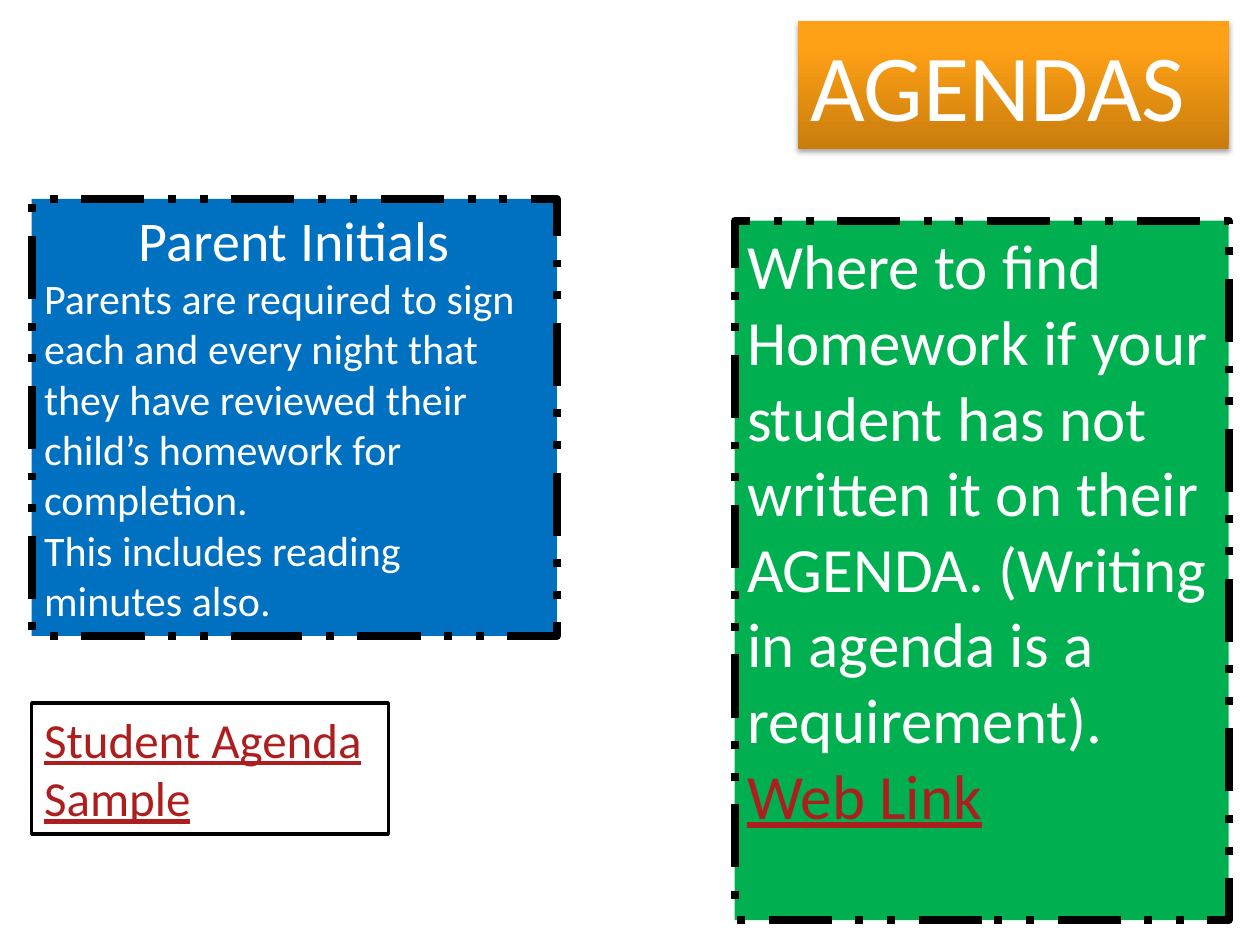
from lxml import etree
from pptx import Presentation
from pptx import util as u
from pptx.dml import color
from pptx.enum import dml, text
from pptx.oxml import ns

WHITE, BLACK, LINK = "FFFFFF", "000000", "AD1F1F"
BANNER_STOPS = [(0, "C97D0D"), (80, "FFA116"), (100, "FFA217")]


def rgb(value):
    """Turn a hex string into a colour."""
    return color.RGBColor.from_string(value)


def add_node(parent, tag, **attributes):
    """Append a DrawingML element and return it."""
    values = {name: str(int(value)) if not isinstance(value, str) else value
              for name, value in attributes.items()}
    return etree.SubElement(parent, ns.qn("a:" + tag), values)


def add_panel(page, box, fill=None, line_width=None, dash=None):
    """Add a wrapping text panel with an optional fill and outline."""
    panel = page.shapes.add_textbox(*(u.Cm(length) for length in box))
    panel.text_frame.word_wrap = True
    panel.text_frame.auto_size = text.MSO_AUTO_SIZE.NONE
    if fill:
        panel.fill.solid()
        panel.fill.fore_color.rgb = rgb(fill)
    if line_width:
        panel.line.color.rgb = rgb(BLACK)
        panel.line.width = u.Pt(line_width)
        panel.line.dash_style = dash
    return panel


def write(panel, lines):
    """Write (wording, size, ink, alignment) lines into a panel."""
    frame = panel.text_frame
    for index, (wording, size, ink, alignment) in enumerate(lines):
        para = frame.add_paragraph() if index else frame.paragraphs[0]
        para.alignment = alignment
        para.font.name = "Calibri"
        para.font.size = u.Pt(size)
        para.font.color.rgb = rgb(ink)
        span = para.add_run()
        span.text = wording
        span.font.underline = True if ink == LINK else None


def add_banner(page, box):
    """Add the shaded title banner with its soft shadow."""
    banner = add_panel(page, box)
    properties = banner.element.spPr
    properties.remove(properties.find(ns.qn("a:noFill")))
    gradient = add_node(properties, "gradFill", rotWithShape=1)
    stops = add_node(gradient, "gsLst")
    for position, shade in BANNER_STOPS:
        stop = add_node(stops, "gs", pos=position * 1000)
        add_node(stop, "srgbClr", val=shade)
    add_node(gradient, "lin", ang=270 * 60000, scaled=0)
    effects = add_node(properties, "effectLst")
    shadow = add_node(effects, "outerShdw", blurRad=u.Pt(3.1), dist=u.Pt(1.8),
                      dir=90 * 60000, rotWithShape=0)
    tint = add_node(shadow, "srgbClr", val=BLACK)
    add_node(tint, "alpha", val=35000)
    write(banner, [("AGENDAS", 54, WHITE, None)])


def add_initials(page, box):
    """Add the blue panel about parent initials."""
    panel = add_panel(page, box, "0070C0", 4.5, dml.MSO_LINE.DASH_DOT_DOT)
    write(panel, [
        ("Parent Initials", 32, WHITE, text.PP_ALIGN.CENTER),
        ("Parents are required to sign each and every night that they have "
         "reviewed their child’s homework for completion.", 24, WHITE, None),
        ("This includes reading minutes also.", 24, WHITE, None),
    ])


def add_homework(page, box):
    """Add the green panel on where to find homework."""
    panel = add_panel(page, box, "00B050", 4.5, dml.MSO_LINE.DASH_DOT_DOT)
    write(panel, [
        ("Where to find Homework if your student has not written it on their "
         "AGENDA. (Writing in agenda is a requirement).", 36, WHITE, None),
        ("Web Link", 36, LINK, None),
    ])


def add_sample(page, box):
    """Add the white panel naming the agenda sample."""
    panel = add_panel(page, box, WHITE, 2)
    write(panel, [("Student Agenda Sample", 28, LINK, None)])


def main():
    """Build the agendas slide and save it."""
    deck = Presentation()
    deck.slide_width, deck.slide_height = u.Cm(25.4), u.Cm(19.05)
    page = deck.slides.add_slide(deck.slide_layouts[6])
    add_banner(page, (16.08, 0.43, 8.69, 2.57))
    add_initials(page, (0.64, 4.01, 10.59, 8.81))
    add_homework(page, (14.81, 4.45, 9.96, 14.1))
    add_sample(page, (0.64, 14.17, 7.19, 2.64))
    deck.save("out.pptx")


if __name__ == "__main__":
    main()
